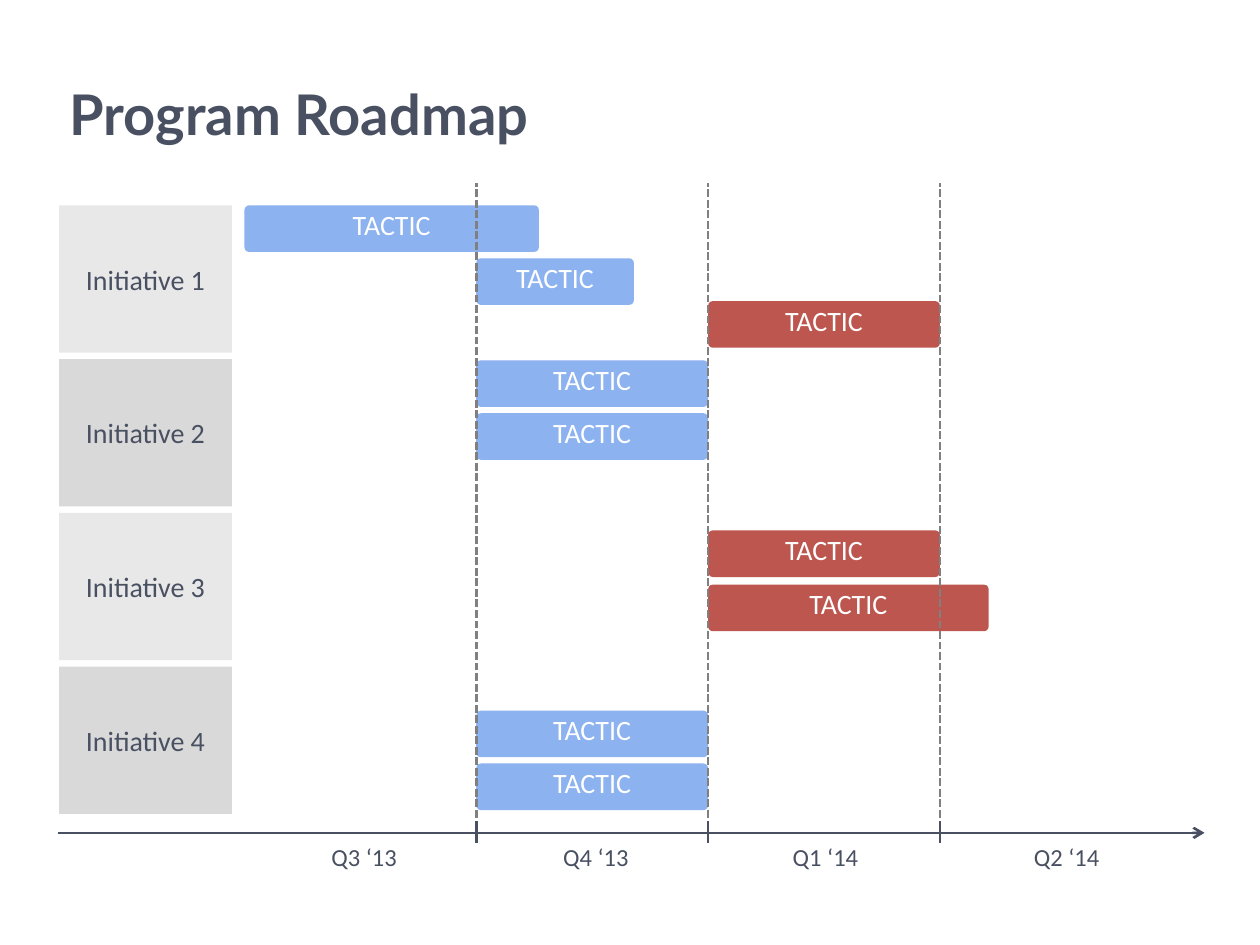
from lxml import etree
from pptx import Presentation
from pptx.dml.color import RGBColor
from pptx.enum.dml import MSO_LINE
from pptx.enum.shapes import MSO_CONNECTOR, MSO_SHAPE
from pptx.enum.text import MSO_ANCHOR, MSO_AUTO_SIZE, PP_ALIGN
from pptx.oxml.ns import qn
from pptx.util import Inches, Pt

# Content
TITLE = "Program Roadmap"
QUARTERS = ["Q3 ‘13", "Q4 ‘13", "Q1 ‘14", "Q2 ‘14"]
LABEL_CENTERS = [0.52, 1.52, 2.51, 3.55]  # in quarters from the first
INITIATIVES = ["Initiative 1", "Initiative 2", "Initiative 3", "Initiative 4"]
TACTIC = "TACTIC"
INK, WHITE, GUIDE = "495061", "FFFFFF", "808080"
BLUE, RED = "8CB2F0", "BD564F"
BANDS = ["E8E8E8", "D9D9D9"]
# (initiative row, drop below its top in inches, start and length in quarters, colour)
TACTICS = [
    (0, 0.00, 0, 1.27, BLUE),
    (0, 0.42, 1, 0.68, BLUE),
    (1, 0.01, 1, 1, BLUE),
    (1, 0.43, 1, 1, BLUE),
    (3, 0.35, 1, 1, BLUE),
    (3, 0.77, 1, 1, BLUE),
    (0, 0.76, 2, 1, RED),
    (2, 0.14, 2, 1, RED),
    (2, 0.57, 2, 1.21, RED),
]

# Grid, in inches
GRID_LEFT, QUARTER_WIDTH = 1.94, 1.84
GRID_TOP, ROW_PITCH, ROW_HEIGHT = 1.63, 1.22, 1.17
HEADER_LEFT, HEADER_WIDTH = 0.47, 1.37
BAR_HEIGHT = 0.37
AXIS_LEFT, AXIS_RIGHT, AXIS_Y = 0.46, 9.56, 6.61
LABEL_WIDTH, LABEL_HEIGHT = 0.73, 0.34


def quarter_x(position):
    return GRID_LEFT + position * QUARTER_WIDTH


def row_y(row):
    return GRID_TOP + row * ROW_PITCH


def color(value):
    return RGBColor.from_string(value)


def write(shape, text, size=16, font="Calibri", ink=INK, bold=False,
          align=PP_ALIGN.CENTER, anchor=MSO_ANCHOR.MIDDLE, spacing=None, wrap=True):
    frame = shape.text_frame
    frame.word_wrap = wrap
    frame.vertical_anchor = anchor
    paragraph = frame.paragraphs[0]
    paragraph.alignment = align
    paragraph.line_spacing = spacing
    run = paragraph.add_run()
    run.text = text
    run.font.size = Pt(size)
    run.font.name = font
    run.font.bold = bold
    run.font.color.rgb = color(ink)


def add_box(slide, kind, left, top, width, height, fill):
    shape = slide.shapes.add_shape(
        kind, Inches(left), Inches(top), Inches(width), Inches(height))
    shape.shadow.inherit = False
    shape.fill.solid()
    shape.fill.fore_color.rgb = color(fill)
    shape.line.fill.background()
    return shape


def add_line(slide, x1, y1, x2, y2, ink=INK, dashed=False, arrow=False):
    line = slide.shapes.add_connector(
        MSO_CONNECTOR.STRAIGHT, Inches(x1), Inches(y1), Inches(x2), Inches(y2))
    line.line.color.rgb = color(ink)
    line.line.width = Pt(1.5)
    if dashed:
        line.line.dash_style = MSO_LINE.SQUARE_DOT
    if arrow:
        etree.SubElement(line.line._get_or_add_ln(), qn("a:tailEnd"), type="arrow")
    etree.SubElement(line._element.spPr, qn("a:effectLst"))


def main():
    presentation = Presentation()
    presentation.slide_width, presentation.slide_height = Inches(10), Inches(7.5)
    slide = presentation.slides.add_slide(presentation.slide_layouts[5])

    # Title
    title = slide.shapes.title
    title.left, title.top = Inches(0.45), Inches(0.52)
    title.width, title.height = Inches(7.04), Inches(0.75)
    title.text_frame.auto_size = MSO_AUTO_SIZE.NONE
    write(title, TITLE, size=32, font="Lato", bold=True, align=PP_ALIGN.LEFT)

    # Time axis with quarter labels
    add_line(slide, AXIS_LEFT, AXIS_Y, AXIS_RIGHT, AXIS_Y, arrow=True)
    for text, center in zip(QUARTERS, LABEL_CENTERS):
        label = slide.shapes.add_textbox(
            Inches(quarter_x(center) - LABEL_WIDTH / 2), Inches(AXIS_Y + 0.02),
            Inches(LABEL_WIDTH), Inches(LABEL_HEIGHT))
        label.text_frame.auto_size = MSO_AUTO_SIZE.SHAPE_TO_FIT_TEXT
        write(label, text, size=14, align=PP_ALIGN.LEFT, anchor=MSO_ANCHOR.TOP, wrap=False)

    # Initiative headers
    for row, text in enumerate(INITIATIVES):
        header = add_box(slide, MSO_SHAPE.RECTANGLE, HEADER_LEFT, row_y(row),
                         HEADER_WIDTH, ROW_HEIGHT, BANDS[row % 2])
        write(header, text)

    # Tactic bars
    for row, drop, start, length, fill in TACTICS:
        bar = add_box(slide, MSO_SHAPE.ROUNDED_RECTANGLE, quarter_x(start),
                      row_y(row) + drop, length * QUARTER_WIDTH, BAR_HEIGHT, fill)
        bar.adjustments[0] = 0.1
        write(bar, TACTIC, ink=WHITE, spacing=0.7)

    # Quarter boundaries: axis tick and dashed guide
    for boundary in range(1, len(QUARTERS)):
        x = quarter_x(boundary)
        add_line(slide, x, AXIS_Y - 0.09, x, AXIS_Y + 0.08)
        add_line(slide, x, AXIS_Y - 0.12, x, 1.45, ink=GUIDE, dashed=True)

    presentation.save("out.pptx")


if __name__ == "__main__":
    main()
